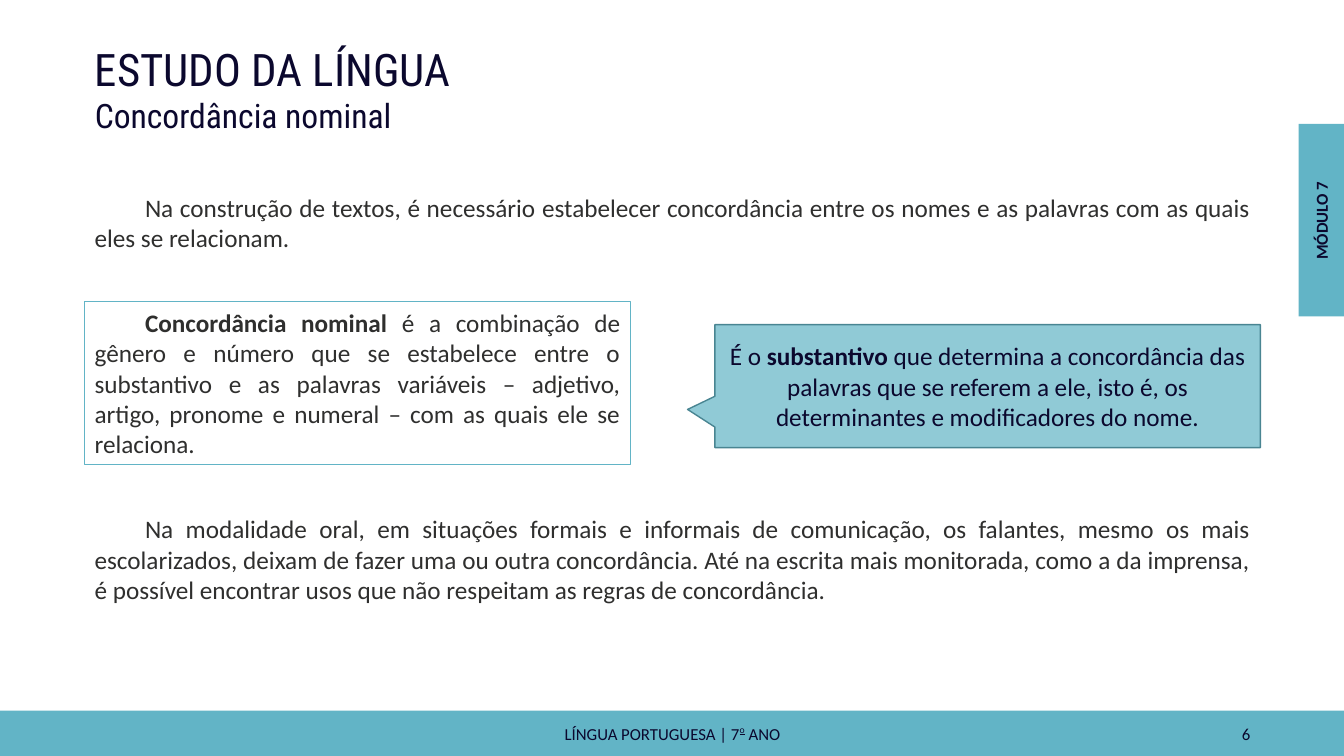
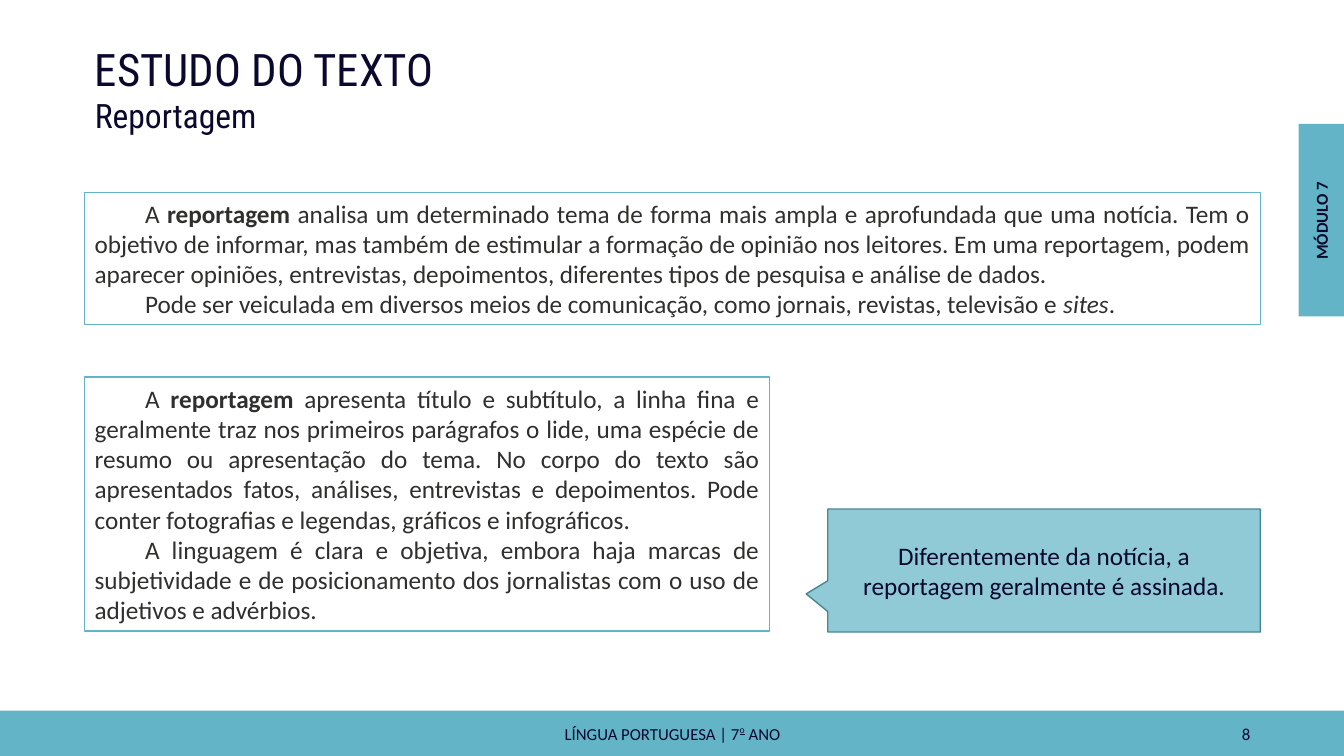
from lxml import etree
from pptx import Presentation
from pptx.dml.color import RGBColor
from pptx.enum.shapes import MSO_SHAPE as SHAPE
from pptx.enum.text import MSO_ANCHOR as ANCHOR, MSO_AUTO_SIZE as AUTO_SIZE, PP_ALIGN as ALIGN
from pptx.oxml.ns import qn
from pptx.util import Inches, Pt

NAVY, GRAPHITE, TEAL, DARK_TEAL = "0B082E", "2F2F2E", "62B4C6", "498592"
LEFT, WIDTH = 0.84, 11.66
RIGHT = LEFT + WIDTH
color = RGBColor.from_string
BOLD, ITALIC = {"bold": True}, {"italic": True}


def write(shape, paragraphs, size=18, ink=NAVY, font="Calibri", align=ALIGN.LEFT,
          anchor=ANCHOR.MIDDLE, indent=0, after=0):
    """Fill a shape with paragraphs, each a list of strings or (string, font settings)."""
    frame = shape.text_frame
    frame.word_wrap = True
    frame.auto_size = AUTO_SIZE.NONE
    frame.vertical_anchor = anchor
    for number, spans in enumerate(paragraphs):
        para = frame.add_paragraph() if number else frame.paragraphs[0]
        para.alignment = align
        para.space_before, para.space_after = Pt(0), Pt(after)
        if indent:
            para._p.get_or_add_pPr().set("indent", str(Inches(indent)))
        for item in spans:
            text, settings = (item, {}) if isinstance(item, str) else item
            span = para.add_run()
            span.text = text
            span.font.name, span.font.size = font, Pt(size)
            span.font.color.rgb = color(ink)
            for name, value in settings.items():
                if name == "baseline":
                    span._r.get_or_add_rPr().set(name, str(value))
                else:
                    setattr(span.font, name, value)


def add_box(page, at, kind=SHAPE.RECTANGLE, fill=None, line=None, weight=0.75, opacity=100):
    box = page.shapes.add_shape(kind, *map(Inches, at))
    box.shadow.inherit = False
    if fill:
        box.fill.solid()
        box.fill.fore_color.rgb = color(fill)
        if opacity < 100:
            tint = box.fill._xPr.find(qn("a:solidFill"))[0]
            etree.SubElement(tint, qn("a:alpha")).set("val", str(opacity * 1000))
    else:
        box.fill.background()
    if line:
        box.line.color.rgb = color(line)
        box.line.width = Pt(weight)
    else:
        box.line.fill.background()
    return box


# Each body text is (place, framed, paragraphs); each callout is (place, spans).
lessons = [
    {
        "number": "6",
        "title": "ESTUDO DA LÍNGUA",
        "subtitle": "Concordância nominal",
        "texts": [
            ((LEFT, 1.85, WIDTH, 0.71), False, [
                ["Na construção de textos, é necessário estabelecer concordância entre os "
                 "nomes e as palavras com as quais eles se relacionam."]]),
            ((LEFT, 2.99, 5.41, 1.62), True, [
                [("Concordância nominal ", BOLD),
                 "é a combinação de gênero e número que se estabelece entre o substantivo e "
                 "as palavras variáveis – adjetivo, artigo, pronome e numeral – com as quais "
                 "ele se relaciona."]]),
            ((LEFT, 5.04, WIDTH, 1.01), False, [
                ["Na modalidade oral, em situações formais e informais de comunicação, os "
                 "falantes, mesmo os mais escolarizados, deixam de fazer uma ou outra "
                 "concordância. Até na escrita mais monitorada, como a da imprensa, é possível "
                 "encontrar usos que não respeitam as regras de concordância."]]),
        ],
        "callout": ((RIGHT - 5.41, 3.22, 5.41, 1.22), [
            "É o ", ("substantivo", BOLD),
            " que determina a concordância das palavras que se referem a ele, isto é, os "
            "determinantes e modificadores do nome."]),
    },
    {
        "number": "8",
        "title": "ESTUDO DO TEXTO",
        "subtitle": "Reportagem",
        "texts": [
            ((LEFT, 1.91, WIDTH, 1.31), True, [
                ["A ", ("reportagem", BOLD),
                 " analisa um determinado tema de forma mais ampla e aprofundada que uma "
                 "notícia. Tem o objetivo de informar, mas também de estimular a formação de "
                 "opinião nos leitores. Em uma reportagem, podem aparecer opiniões, "
                 "entrevistas, depoimentos, diferentes tipos de pesquisa e análise de dados."],
                ["Pode ser veiculada em diversos meios de comunicação, como jornais, revistas, "
                 "televisão e ", ("sites", ITALIC), "."]]),
            ((LEFT, 3.74, 6.79, 2.52), True, [
                ["A ", ("reportagem", BOLD),
                 " apresenta título e subtítulo, a linha fina e geralmente traz nos primeiros "
                 "parágrafos o lide, uma espécie de resumo ou apresentação do tema. No corpo do "
                 "texto são apresentados fatos, análises, entrevistas e depoimentos. Pode conter "
                 "fotografias e legendas, gráficos e infográficos."],
                ["A linguagem é clara e objetiva, embora haja marcas de subjetividade e de "
                 "posicionamento dos jornalistas com o uso de adjetivos e advérbios."]]),
        ],
        "callout": ((RIGHT - 4.29, 5.05, 4.29, 1.22), [
            "Diferentemente da notícia, a reportagem geralmente é assinada."]),
    },
]

deck = Presentation()
deck.slide_width, deck.slide_height = Inches(13.33), Inches(7.5)
title_only = deck.slide_layouts[5]

for lesson in lessons:
    page = deck.slides.add_slide(title_only)

    # Footer band and module tab
    add_box(page, (0, 7.05, 13.33, 0.45), fill=TEAL)
    footer = add_box(page, (4.42, 7.09, 4.5, 0.38))
    write(footer, [["LÍNGUA PORTUGUESA | 7", ("o", {"underline": True, "baseline": 45000}), " ANO"]],
          size=12, align=ALIGN.CENTER, after=6)
    page_number = add_box(page, (RIGHT - 3.08, 7.09, 3.08, 0.38))
    write(page_number, [[lesson["number"]]], size=12, align=ALIGN.RIGHT, after=6)
    add_box(page, (12.88, 1.23, 0.45, 1.91), fill=TEAL)
    module = add_box(page, (12.15, 2.04, 1.91, 0.3))
    module.rotation = 270
    write(module, [[("MÓDULO 7", BOLD)]], size=12, align=ALIGN.CENTER, anchor=ANCHOR.TOP)

    title = page.shapes.title
    title.left, title.top, title.width, title.height = map(Inches, (LEFT, 0.36, 6.79, 1.04))
    write(title, [[lesson["title"]], [(lesson["subtitle"], {"size": Pt(24)})]],
          size=32, font="Roboto Condensed", anchor=ANCHOR.TOP)

    for place, framed, paragraphs in lesson["texts"]:
        body = add_box(page, place, line=TEAL if framed else None)
        write(body, paragraphs, ink=GRAPHITE, align=ALIGN.JUSTIFY, indent=0.5)

    place, spans = lesson["callout"]
    callout = add_box(page, place, SHAPE.RECTANGULAR_CALLOUT, TEAL, DARK_TEAL, weight=1, opacity=70)
    callout.adjustments[0], callout.adjustments[1] = -0.55, 0.19
    write(callout, [spans], align=ALIGN.CENTER)

deck.save("out.pptx")
